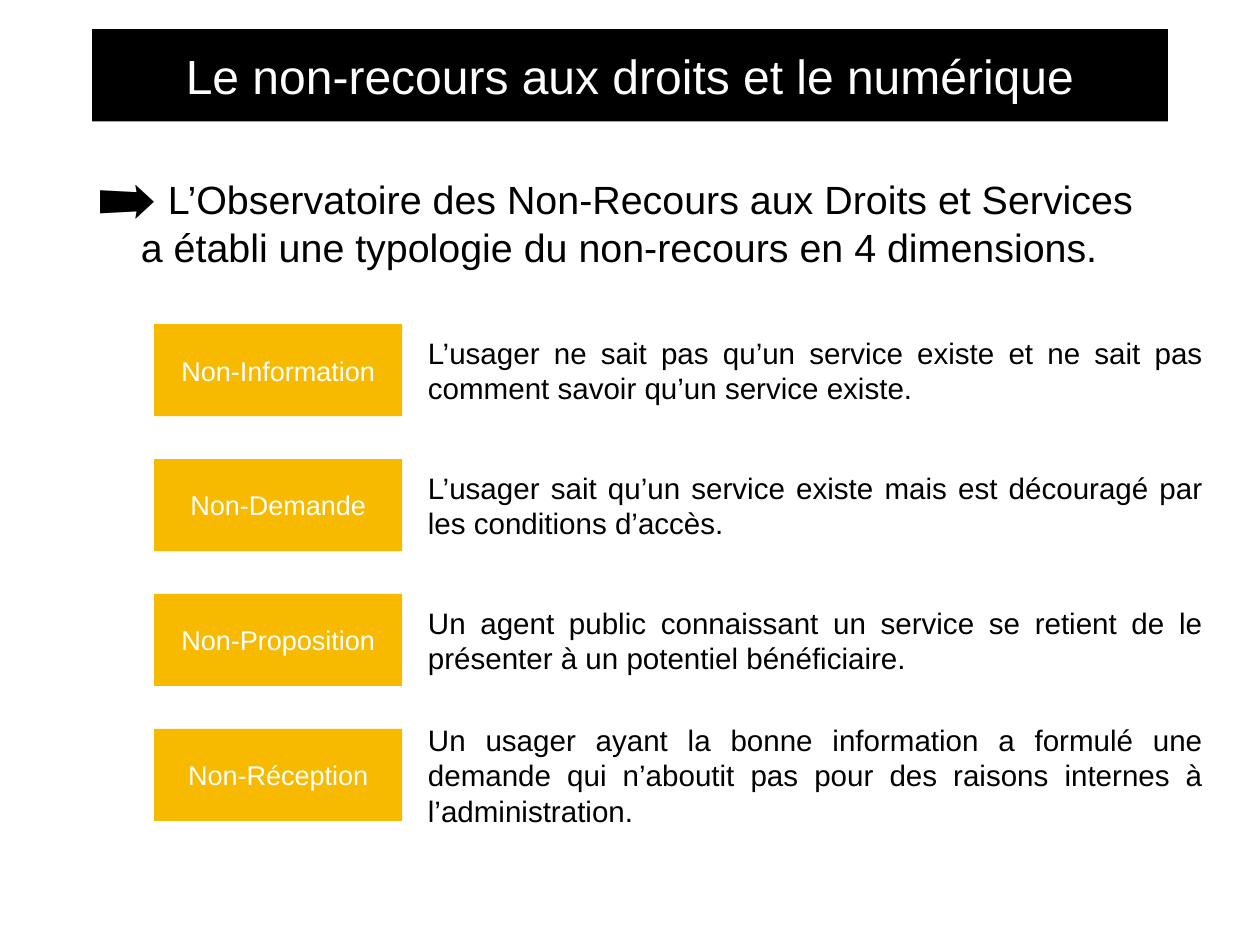
from lxml.etree import SubElement
from pptx import Presentation
from pptx.dml.color import RGBColor
from pptx.enum.shapes import MSO_SHAPE
from pptx.enum.text import MSO_ANCHOR, MSO_AUTO_SIZE, PP_ALIGN
from pptx.oxml.ns import qn
from pptx.util import Inches, Pt

COLORS = {"black": "000000", "white": "FFFFFF", "gold": "F7BA01"}
PAD = Inches(0.06)
FRAME = {
    "word_wrap": True,
    "auto_size": MSO_AUTO_SIZE.NONE,
    "vertical_anchor": MSO_ANCHOR.MIDDLE,
    "margin_left": PAD,
    "margin_right": PAD,
    "margin_top": PAD,
    "margin_bottom": PAD,
}
# Label, description, number of lines in the description
TYPES = [
    ("Non-Information",
     "L’usager ne sait pas qu’un service existe et ne sait pas comment "
     "savoir qu’un service existe.", 2),
    ("Non-Demande",
     "L’usager sait qu’un service existe mais est découragé par les "
     "conditions d’accès.", 2),
    ("Non-Proposition",
     "Un agent public connaissant un service se retient de le présenter "
     "à un potentiel bénéficiaire.", 2),
    ("Non-Réception",
     "Un usager ayant la bonne information a formulé une demande qui "
     "n’aboutit pas pour des raisons internes à l’administration.", 3),
]
ROW_TOP, ROW_STEP, ROW_HIGH = 3.66, 1.523, 1.04
LINE_HIGH = 0.4


def color(name):
    return RGBColor.from_string(COLORS[name])


def apply(item, values):
    for name, value in values.items():
        setattr(item, name, value)


def place(shape, left, top, width, height):
    apply(shape, {"left": Inches(left), "top": Inches(top),
                  "width": Inches(width), "height": Inches(height)})


def paint(shape, name):
    shape.fill.solid()
    shape.fill.fore_color.rgb = color(name)
    shape.line.fill.background()


def write(shape, text, size, ink, align):
    """Fill the shape with one formatted paragraph and return it."""
    frame = shape.text_frame
    apply(frame, FRAME)
    para = frame.paragraphs[0]
    para.alignment = align
    run = para.add_run()
    run.text = text
    apply(run.font, {"name": "Arial", "size": Pt(size)})
    run.font.color.rgb = color(ink)
    return para


def add_arrow(para):
    """Give the paragraph a large arrow bullet with a hanging indent."""
    props = para._p.get_or_add_pPr()
    indent = Inches(0.49)
    props.set("marL", str(indent))
    props.set("indent", str(-indent))
    SubElement(props, qn("a:buSzPct"), val="145000")
    SubElement(props, qn("a:buFont"), typeface="Arial")
    SubElement(props, qn("a:buChar"), char="➡")


def add_title(slide):
    title = slide.shapes.title
    place(title, 1.04, 0.33, 12.14, 1.04)
    paint(title, "black")
    write(title, "Le non-recours aux droits et le numérique",
          39, "white", PP_ALIGN.CENTER)


def add_intro(slide):
    body = slide.placeholders[1]
    place(body, 1.04, 1.46, 12.14, 2.11)
    para = write(body, " L’Observatoire des Non-Recours aux Droits et Services "
                 "a établi une typologie du non-recours en 4 dimensions.",
                 32, "black", PP_ALIGN.LEFT)
    para.space_before = Pt(42)
    add_arrow(para)


def add_label(slide, text, top):
    label = slide.shapes.add_shape(
        MSO_SHAPE.RECTANGLE, Inches(1.74), Inches(top),
        Inches(2.8), Inches(ROW_HIGH))
    label.shadow.inherit = False
    paint(label, "gold")
    write(label, text, 22, "white", PP_ALIGN.CENTER)


def add_detail(slide, text, lines, middle):
    height = LINE_HIGH * lines + 0.11
    box = slide.shapes.add_textbox(
        Inches(4.77), Inches(middle - height / 2),
        Inches(8.86), Inches(height))
    write(box, text, 24, "black", PP_ALIGN.JUSTIFY)


def main():
    deck = Presentation()
    apply(deck, {"slide_width": Inches(14.22), "slide_height": Inches(10.67)})
    slide = deck.slides.add_slide(deck.slide_layouts[1])
    add_title(slide)
    add_intro(slide)
    for row, (label, detail, lines) in enumerate(TYPES):
        top = ROW_TOP + row * ROW_STEP
        add_label(slide, label, top)
        add_detail(slide, detail, lines, top + ROW_HIGH / 2)
    deck.save("out.pptx")


if __name__ == "__main__":
    main()
